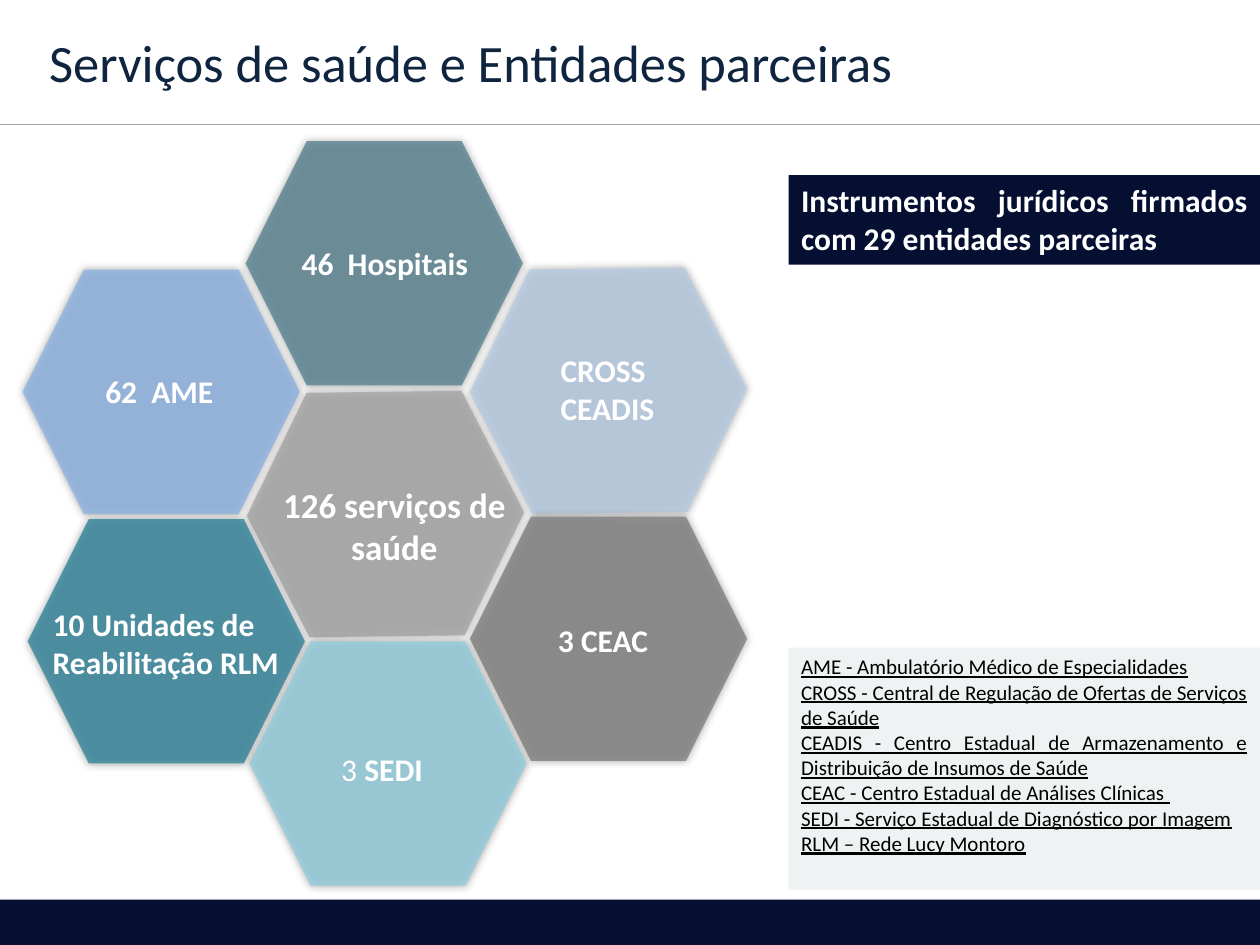
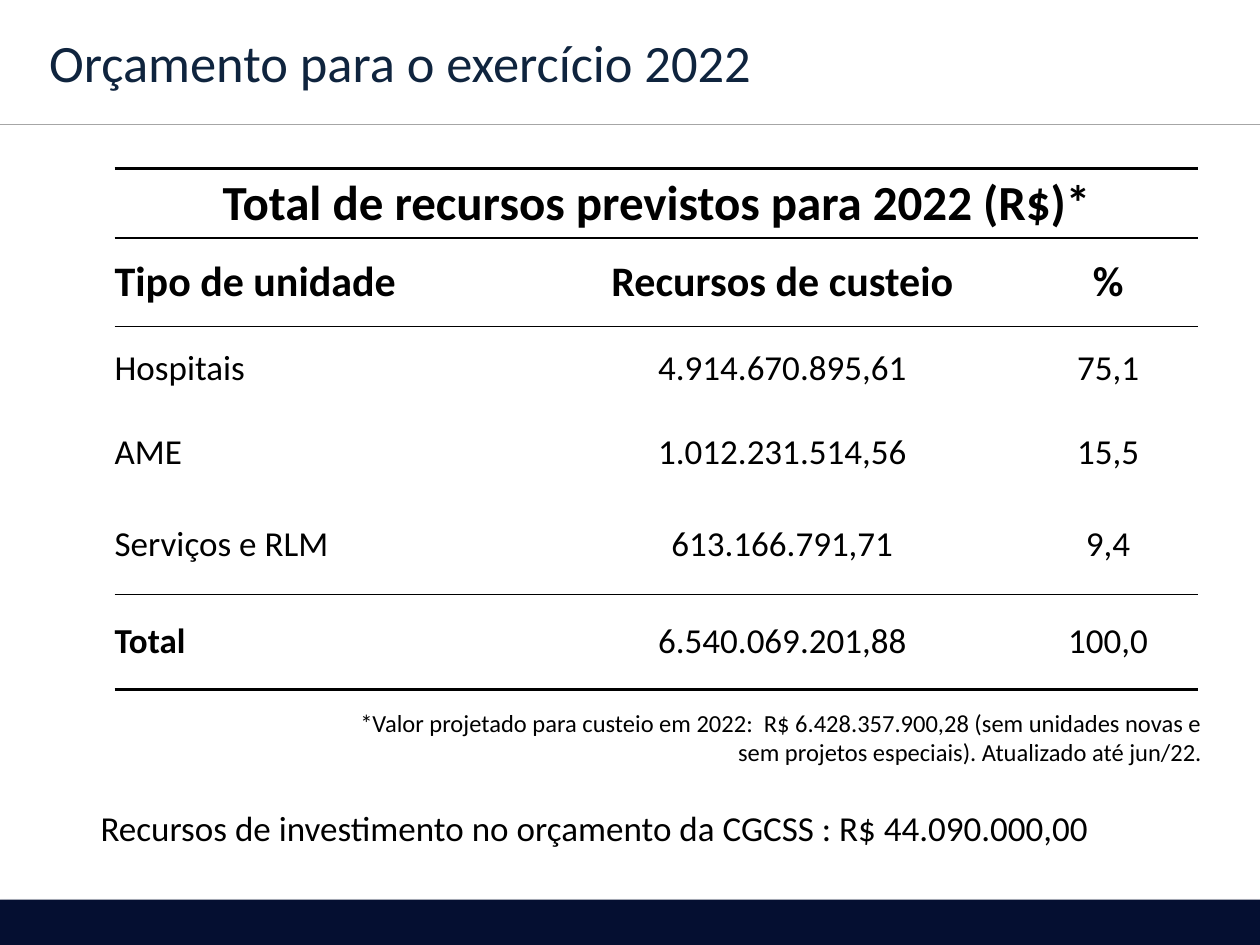
import pptx
import pptx.util
import pptx.dml.color
import pptx.enum.shapes
import pptx.enum.text
import pptx.oxml.ns
from lxml import etree

Inches, Pt = pptx.util.Inches, pptx.util.Pt
SHAPES = pptx.enum.shapes.MSO_SHAPE
ALIGN = pptx.enum.text.PP_ALIGN
MIDDLE = pptx.enum.text.MSO_ANCHOR.MIDDLE
TOP = pptx.enum.text.MSO_ANCHOR.TOP
AUTO = pptx.enum.text.MSO_AUTO_SIZE

NAVY, TITLE_BLUE, RULE_GREY = "050F31", "0F243E", "A6A6A6"
SLATE, WHITE, BLACK = "598392", "FFFFFF", "000000"
FONT = "Calibri"
LABEL = {"size": Pt(18), "bold": True}

SERVICES_TITLE = "Serviços de saúde e Entidades parceiras"
HEXAGON_SIZE = (2.2, 1.94)
HEXAGONS = [
    (1.95, 1.12, SLATE, 0),
    (0.18, 2.14, "8EB4E3", 0),
    (3.73, 2.13, "B9CDE5", 359.3),
    (1.96, 3.11, "A6A6A6", 359.3),
    (0.22, 4.12, "31859C", 0),
    (3.73, 4.1, "808080", 0),
    (1.98, 5.09, "93CDDD", 0),
]
SERVICE_LABELS = [
    ((1.94, 1.89, 2.23, 0.4), ["46  Hospitais"], ALIGN.CENTER, LABEL),
    ((0.15, 2.9, 2.23, 0.4), ["62  AME"], ALIGN.CENTER, LABEL),
    ((0.32, 4.75, 2.25, 0.71), ["10 Unidades de", "Reabilitação RLM"], ALIGN.LEFT, LABEL),
    ((4.35, 2.74, 2.25, 0.71), ["CROSS", "CEADIS"], ALIGN.LEFT, LABEL),
    ((4.33, 4.88, 1.12, 0.4), ["3 CEAC"], ALIGN.LEFT, LABEL),
    ((2.61, 5.9, 1.12, 0.4), [[("3 ", False), ("SEDI", True)]], ALIGN.LEFT, LABEL),
    ((1.94, 3.79, 2.38, 0.77), ["126 serviços de saúde"], ALIGN.CENTER,
     {"size": Pt(20), "bold": True}),
]
ACRONYMS = [
    "AME - Ambulatório Médico de Especialidades",
    "CROSS - Central de Regulação de Ofertas de Serviços de Saúde",
    "CEADIS - Centro Estadual de Armazenamento e Distribuição de Insumos de Saúde",
    "CEAC - Centro Estadual de Análises Clínicas ",
    "SEDI - Serviço Estadual de Diagnóstico por Imagem",
    "RLM – Rede Lucy Montoro",
]
AGREEMENTS = ["Instrumentos jurídicos firmados com 29 entidades parceiras"]

BUDGET_TITLE = "Orçamento para o exercício 2022"
BUDGET_ROWS = [
    ("Total de recursos previstos para 2022 (R$)*", "", ""),
    ("Tipo de unidade", "Recursos de custeio", "%"),
    ("Hospitais", "4.914.670.895,61", "75,1"),
    ("AME", "1.012.231.514,56", "15,5"),
    ("Serviços e RLM", "613.166.791,71", "9,4"),
    ("Total", "6.540.069.201,88", "100,0"),
]
BUDGET_WIDTHS = [3.43, 3.74, 1.43]
BUDGET_HEIGHTS = [0.55, 0.7, 0.67, 0.67, 0.79, 0.75]
BUDGET_SIZES = [28, 24, 20, 20, 20, 20]
BUDGET_RULES = [2, 1, 1, 0, 0, 1, 2]
PROJECTION_NOTE = [
    "*Valor projetado para custeio em 2022:  R$ 6.428.357.900,28 "
    "(sem unidades novas e sem projetos especiais). Atualizado até jun/22."
]
INVESTMENT = ["Recursos de investimento no orçamento da CGCSS : R$ 44.090.000,00"]


def color(value):
    return pptx.dml.color.RGBColor.from_string(value)


def assign(target, values):
    for name, value in values.items():
        setattr(target, name, value)


def add_xml(parent, tag, **attributes):
    return etree.SubElement(parent, pptx.oxml.ns.qn(tag), attributes)


def paint(part, fill, opacity=100):
    part.fill.solid()
    part.fill.fore_color.rgb = color(fill)
    if opacity < 100:
        tone = part.fill._xPr.find(".//" + pptx.oxml.ns.qn("a:srgbClr"))
        add_xml(tone, "a:alpha", val=str(opacity * 1000))


def cast_shadow(shape, blur, distance, angle):
    effects = shape._element.spPr.find(pptx.oxml.ns.qn("a:effectLst"))
    shadow = add_xml(effects, "a:outerShdw", blurRad=str(Pt(blur)), dist=str(Pt(distance)),
                     dir=str(angle * 60000), algn="ctr", rotWithShape="0")
    add_xml(add_xml(shadow, "a:srgbClr", val=BLACK), "a:alpha", val="40000")


def add_block(slide, kind, place, fill, opacity=100):
    block = slide.shapes.add_shape(kind, *map(Inches, place))
    block.shadow.inherit = False
    paint(block, fill, opacity)
    block.line.fill.background()
    return block


def write(frame, paragraphs, align, values, tone, **layout):
    assign(frame, {"word_wrap": True, "vertical_anchor": TOP,
                   "auto_size": AUTO.SHAPE_TO_FIT_TEXT, **layout})
    for index, content in enumerate(paragraphs):
        paragraph = frame.add_paragraph() if index else frame.paragraphs[0]
        paragraph.alignment = align
        pieces = [(content, values.get("bold", False))] if isinstance(content, str) else content
        for words, bold in pieces:
            run = paragraph.add_run()
            run.text = words
            assign(run.font, {"name": FONT, **values, "bold": bold})
            run.font.color.rgb = color(tone)


def add_words(slide, place, paragraphs, align, values, tone):
    words = slide.shapes.add_textbox(*map(Inches, place))
    write(words.text_frame, paragraphs, align, values, tone)


def add_page(deck, heading):
    slide = deck.slides.add_slide(deck.slide_layouts[5])
    band = add_block(slide, SHAPES.RECTANGLE, (0, 7.14, 10, 0.36), NAVY)
    cast_shadow(band, 4, 3, 90)
    rule = slide.shapes.add_connector(pptx.enum.shapes.MSO_CONNECTOR.STRAIGHT,
                                      0, Inches(0.99), Inches(10), Inches(0.99))
    rule.line.color.rgb = color(RULE_GREY)
    rule.line.width = Pt(0.75)
    add_xml(rule._element.spPr, "a:effectLst")
    title = slide.shapes.title
    assign(title, {"left": Inches(0.29), "top": Inches(0.05),
                   "width": Inches(8.9), "height": Inches(0.88)})
    write(title.text_frame, [heading], ALIGN.LEFT, {"size": Pt(30)}, TITLE_BLUE,
          vertical_anchor=MIDDLE, auto_size=AUTO.NONE)
    return slide


def build_services(deck):
    slide = add_page(deck, SERVICES_TITLE)
    for left, top, fill, rotation in HEXAGONS:
        hexagon = add_block(slide, SHAPES.HEXAGON, (left, top, *HEXAGON_SIZE), fill, 79)
        hexagon.rotation = rotation
        cast_shadow(hexagon, 5, 0, 0)
    for place, paragraphs, align, values in SERVICE_LABELS:
        add_words(slide, place, paragraphs, align, values, WHITE)
    glossary = add_block(slide, SHAPES.RECTANGLE, (6.26, 5.14, 3.74, 1.92), SLATE, 10)
    write(glossary.text_frame, ACRONYMS, ALIGN.JUSTIFY,
          {"size": Pt(12), "underline": True}, BLACK, auto_size=AUTO.NONE)
    agreements = add_block(slide, SHAPES.RECTANGLE, (6.26, 1.39, 3.74, 0.71), NAVY)
    write(agreements.text_frame, AGREEMENTS, ALIGN.JUSTIFY, LABEL, WHITE)


def add_border(cell, tag, width):
    properties = cell._tc.get_or_add_tcPr()
    if width:
        border = add_xml(properties, tag, w=str(Pt(width)))
        add_xml(add_xml(border, "a:solidFill"), "a:srgbClr", val=BLACK)
    else:
        add_xml(add_xml(properties, tag, w="0"), "a:noFill")


def fill_cell(cell, words, row, column):
    assign(cell, {"margin_left": 0, "margin_right": 0, "margin_top": 0,
                  "margin_bottom": 0, "vertical_anchor": MIDDLE})
    borders = {"a:lnL": 0, "a:lnR": 0, "a:lnT": BUDGET_RULES[row],
               "a:lnB": BUDGET_RULES[row + 1]}
    for tag, width in borders.items():
        add_border(cell, tag, width)
    paint(cell, WHITE)
    if words:
        paragraph = cell.text_frame.paragraphs[0]
        paragraph.alignment = ALIGN.CENTER if column or not row else ALIGN.LEFT
        run = paragraph.add_run()
        run.text = words
        assign(run.font, {"name": FONT, "size": Pt(BUDGET_SIZES[row]),
                          "bold": row < 2 or words == "Total"})
        run.font.color.rgb = color(BLACK)


def build_budget(deck):
    slide = add_page(deck, BUDGET_TITLE)
    add_words(slide, (2.4, 5.57, 7.24, 0.57), PROJECTION_NOTE, ALIGN.RIGHT,
              {"size": Pt(14)}, BLACK)
    budget = slide.shapes.add_table(
        len(BUDGET_ROWS), len(BUDGET_WIDTHS), Inches(0.91), Inches(1.34),
        Inches(sum(BUDGET_WIDTHS)), Inches(sum(BUDGET_HEIGHTS))).table
    assign(budget, {"first_row": False, "horz_banding": False})
    for column, width in zip(budget.columns, BUDGET_WIDTHS):
        column.width = Inches(width)
    for row, height in zip(budget.rows, BUDGET_HEIGHTS):
        row.height = Inches(height)
    budget.cell(0, 0).merge(budget.cell(0, 2))
    for row, entries in enumerate(BUDGET_ROWS):
        for column, words in enumerate(entries):
            fill_cell(budget.cell(row, column), words, row, column)
    add_words(slide, (0.7, 6.35, 8.6, 0.44), INVESTMENT, ALIGN.LEFT,
              {"size": Pt(20)}, BLACK)


def main():
    deck = pptx.Presentation()
    assign(deck, {"slide_width": Inches(10), "slide_height": Inches(7.5)})
    build_services(deck)
    build_budget(deck)
    deck.save("out.pptx")


if __name__ == "__main__":
    main()
